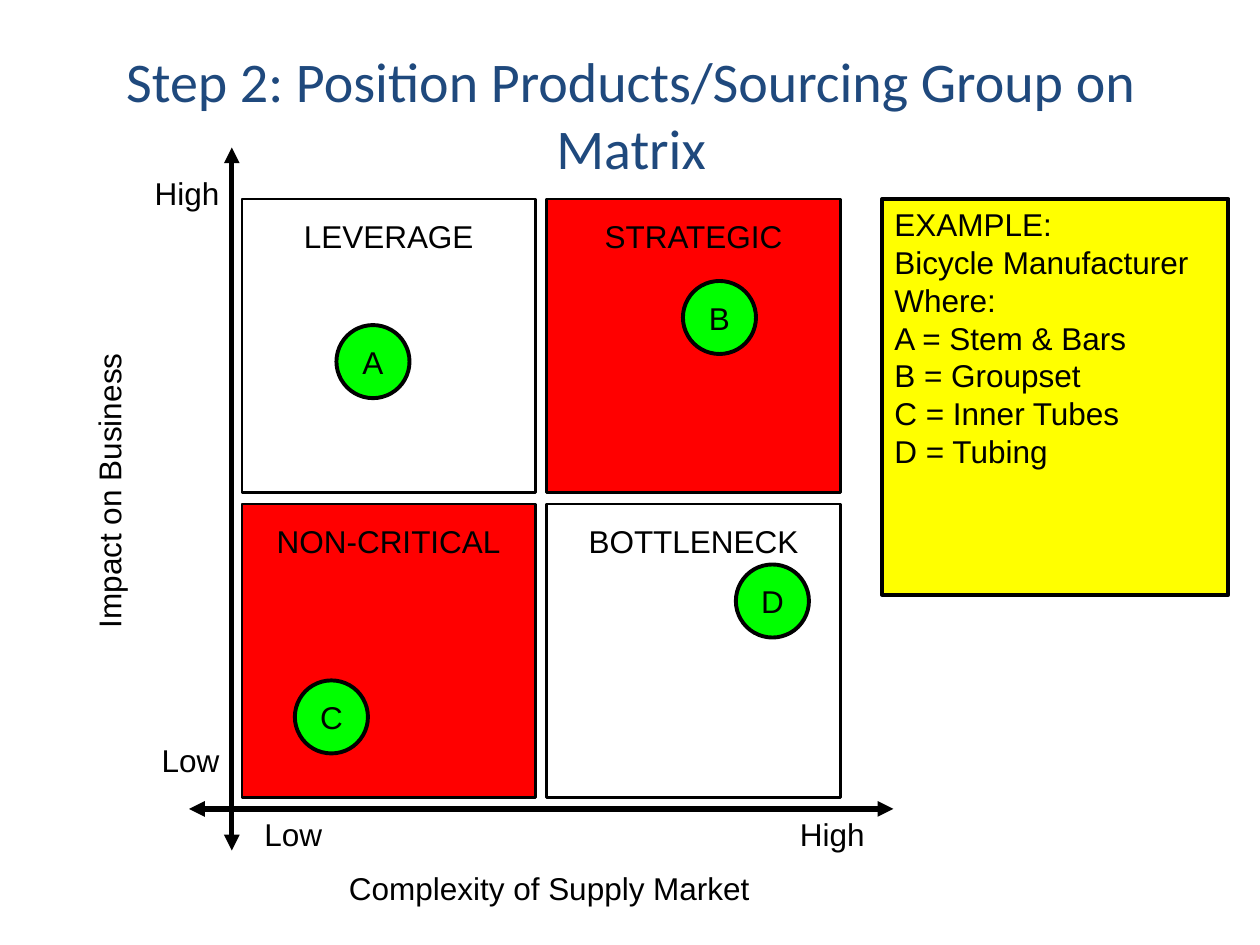
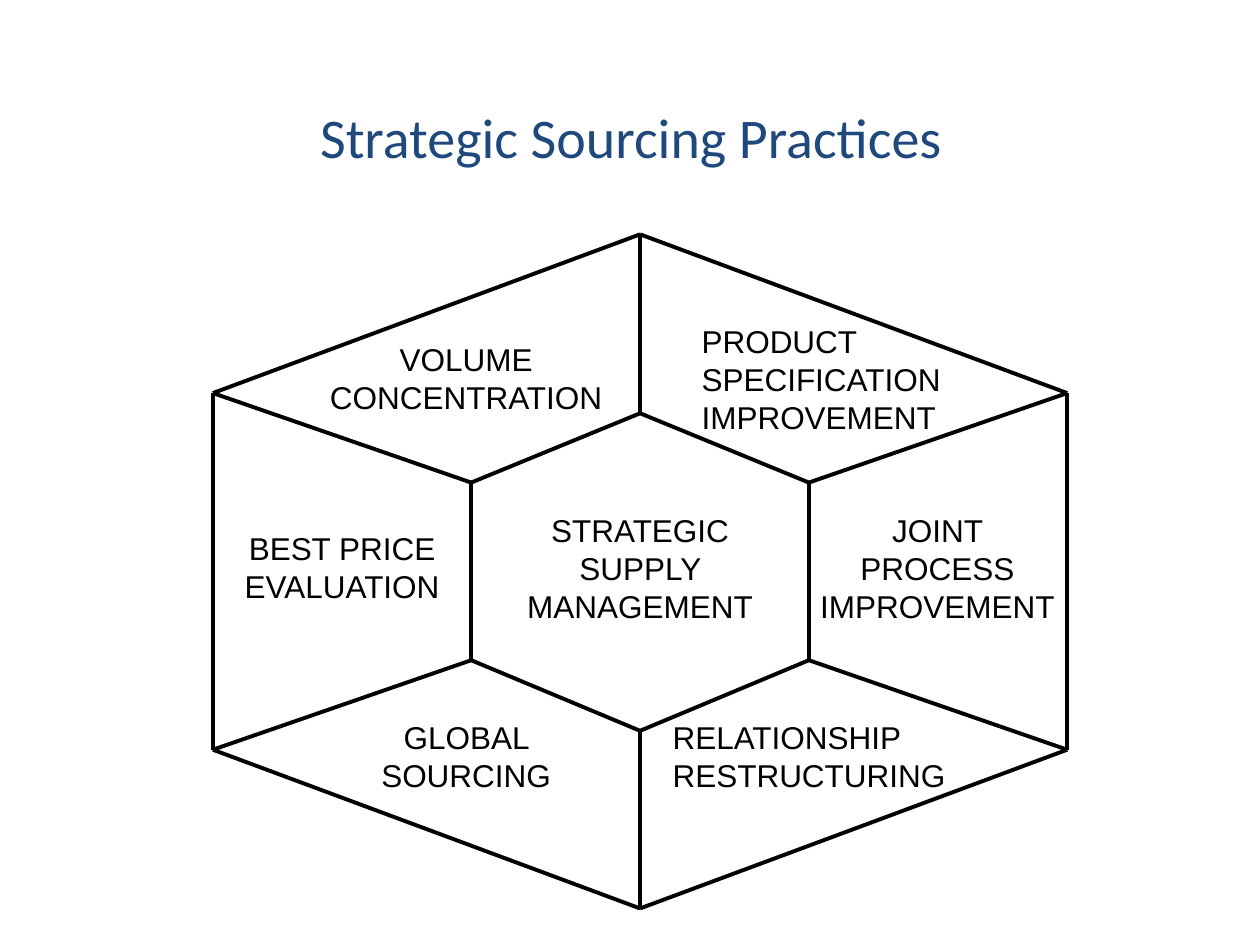
from itertools import product

from lxml import etree
from pptx import Presentation
from pptx.dml.color import RGBColor
from pptx.enum import shapes, text
from pptx.oxml import ns
from pptx.util import Inches, Pt

COLORS = {
    "title": "1F497D",
    "ink": "000000",
    "white": "FFFFFF",
    "red": "FF0000",
    "green": "00FF00",
    "yellow": "FFFF00",
}
TITLE_FONT = {"name": "Calibri", "size": Pt(32)}
BODY_FONT = {"name": "Arial", "size": Pt(18)}
LEFT, CENTER, RIGHT = text.PP_ALIGN.LEFT, text.PP_ALIGN.CENTER, text.PP_ALIGN.RIGHT
TOP, MIDDLE = text.MSO_ANCHOR.TOP, text.MSO_ANCHOR.MIDDLE


def rgb(color):
    """Return the named colour."""
    return RGBColor.from_string(COLORS[color])


def apply(target, values):
    """Set each attribute of the target from a dict."""
    for name, value in values.items():
        setattr(target, name, value)


def write(shape, lines, font=BODY_FONT, color="ink", align=CENTER, **frame_format):
    """Write the lines as formatted paragraphs of a shape."""
    frame = shape.text_frame
    apply(frame, {"word_wrap": True, "vertical_anchor": TOP, **frame_format})
    frame.text = "\n".join(lines)
    for paragraph in frame.paragraphs:
        paragraph.alignment = align
        apply(paragraph.runs[0].font, font)
        paragraph.runs[0].font.color.rgb = rgb(color)


def add_titled_slide(presentation, title, top, height):
    """Add a title-only slide with its title in place."""
    slide = presentation.slides.add_slide(presentation.slide_layouts[5])
    box = {"left": 0.51, "top": top, "width": 9, "height": height}
    apply(slide.shapes.title, {name: Inches(value) for name, value in box.items()})
    write(slide.shapes.title, [title], TITLE_FONT, "title",
          auto_size=text.MSO_AUTO_SIZE.NONE)
    return slide


def add_label(slide, label, left, top, width, height=0.4, align=CENTER, rotation=0):
    """Add a text box with one label."""
    box = slide.shapes.add_textbox(*map(Inches, (left, top, width, height)))
    box.rotation = rotation
    write(box, [label], align=align)


def add_filled(slide, kind, box, fill, weight, lines, **text_format):
    """Add a filled and outlined shape with text."""
    shape = slide.shapes.add_shape(kind, *map(Inches, box))
    shape.shadow.inherit = False
    shape.fill.solid()
    shape.fill.fore_color.rgb = rgb(fill)
    shape.line.color.rgb = rgb("ink")
    shape.line.width = Pt(weight)
    write(shape, lines, **text_format)


def add_line(slide, start, end, weight=2.25, arrows=False):
    """Add a straight line, with arrowheads at both ends if asked."""
    line = slide.shapes.add_connector(
        shapes.MSO_CONNECTOR.STRAIGHT, *map(Inches, (*start, *end)))
    line.line.color.rgb = rgb("ink")
    line.line.width = Pt(weight)
    properties = line._element.spPr
    etree.SubElement(properties, ns.qn("a:effectLst"))
    if arrows:
        outline = properties.find(ns.qn("a:ln"))
        for end_name in ("a:headEnd", "a:tailEnd"):
            etree.SubElement(outline, ns.qn(end_name), type="triangle")


def build_matrix_slide(presentation):
    """Build the sourcing matrix with products placed on it."""
    slide = add_titled_slide(
        presentation, "Step 2: Position Products/Sourcing Group on Matrix", 0.32, 0.87)
    rectangle, oval = shapes.MSO_SHAPE.RECTANGLE, shapes.MSO_SHAPE.OVAL

    add_line(slide, (7.09, 6.42), (1.5, 6.42), 3, arrows=True)
    add_line(slide, (1.84, 1.17), (1.84, 6.75), 3, arrows=True)

    quadrants = [("LEVERAGE", "white"), ("STRATEGIC", "red"),
                 ("NON-CRITICAL", "red"), ("BOTTLENECK", "white")]
    pitch, side = 2.42, 2.33
    for (row, column), (name, fill) in zip(product(range(2), repeat=2), quadrants):
        box = (1.92 + column * pitch, 1.58 + row * pitch, side, side)
        add_filled(slide, rectangle, box, fill, 1.5, [name], margin_top=Inches(0.14))

    add_label(slide, "Complexity of Supply Market", 2.67, 6.85, 3.58, align=LEFT)
    add_label(slide, "Impact on Business", -0.47, 3.55, 2.67, align=LEFT, rotation=270)
    add_label(slide, "High", 6.25, 6.42, 0.92, align=LEFT)
    add_label(slide, "Low", 2, 6.42, 0.92, align=LEFT)
    add_label(slide, "Low", 0.84, 5.83, 1, align=RIGHT)
    add_label(slide, "High", 0.84, 1.33, 1, align=RIGHT)

    example = ["EXAMPLE:", "Bicycle Manufacturer", "Where:", "A = Stem & Bars",
               "B = Groupset", "C = Inner Tubes", "D = Tubing"]
    add_filled(slide, rectangle, (7, 1.58, 2.75, 3.14), "yellow", 2.25, example, align=LEFT)

    products = {"A": (2.67, 2.58), "B": (5.42, 2.23), "C": (2.34, 5.4), "D": (5.84, 4.48)}
    no_margins = dict.fromkeys(
        ("margin_left", "margin_right", "margin_top", "margin_bottom"), 0)
    for letter, corner in products.items():
        add_filled(slide, oval, (*corner, 0.58, 0.58), "green", 2.25, [letter],
                   vertical_anchor=MIDDLE, **no_margins)


def hexagon(left, center, right, top, shoulder, hip, bottom):
    """Return the corners of an upright hexagon, clockwise from the top."""
    return [(center, top), (right, shoulder), (right, hip),
            (center, bottom), (left, hip), (left, shoulder)]


def build_practices_slide(presentation):
    """Build the hexagon of sourcing practices."""
    slide = add_titled_slide(presentation, "Strategic Sourcing Practices", 0.76, 1.25)
    outer = hexagon(1.69, 5.08, 8.47, 1.86, 3.12, 5.95, 7.21)
    inner = hexagon(3.74, 5.08, 6.42, 3.28, 3.83, 5.24, 5.8)
    for corners in (outer, inner):
        for start, end in zip(corners, corners[1:] + corners[:1]):
            add_line(slide, start, end)
    for start, end in zip(inner, outer):
        add_line(slide, start, end)

    practices = [
        ("STRATEGIC SUPPLY MANAGEMENT", 4.02, 4.01, 2.12, 1, CENTER),
        ("VOLUME CONCENTRATION", 2.4, 2.65, 2.6, 0.7, CENTER),
        ("BEST PRICE EVALUATION", 1.69, 4.15, 2.05, 0.7, CENTER),
        ("GLOBAL SOURCING", 2.48, 5.65, 2.44, 0.7, CENTER),
        ("RELATIONSHIP RESTRUCTURING", 5.24, 5.65, 2.84, 0.7, LEFT),
        ("JOINT PROCESS IMPROVEMENT", 6.34, 4.01, 2.2, 1, CENTER),
        ("PRODUCT SPECIFICATION IMPROVEMENT", 5.47, 2.51, 2.84, 1, LEFT),
    ]
    for practice in practices:
        add_label(slide, *practice)


def main():
    """Build both slides and save the presentation."""
    presentation = Presentation()
    presentation.slide_width = Inches(10)
    presentation.slide_height = Inches(7.5)
    build_matrix_slide(presentation)
    build_practices_slide(presentation)
    presentation.save("out.pptx")


if __name__ == "__main__":
    main()
